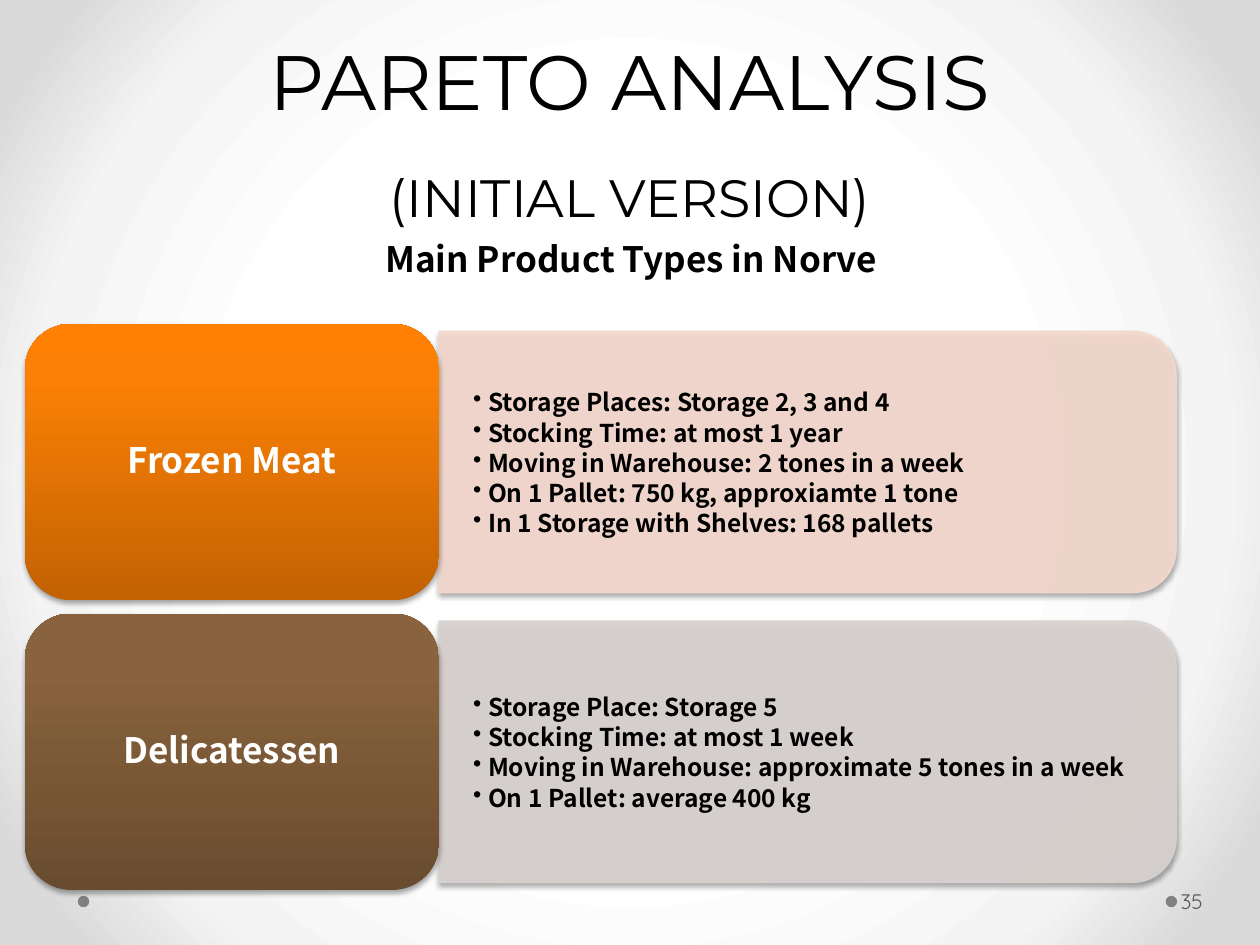
from dataclasses import dataclass

from lxml.etree import SubElement
from pptx import Presentation
from pptx.dml.color import RGBColor
from pptx.enum.shapes import MSO_SHAPE
from pptx.enum.text import MSO_ANCHOR, MSO_AUTO_SIZE, PP_ALIGN
from pptx.oxml.ns import qn
from pptx.util import Cm, Pt


@dataclass(frozen=True)
class Theme:
    title_font: str = "Montserrat"
    body_font: str = "Noto Sans CJK SC"
    number_font: str = "Quicksand"
    title_size: float = 44
    version_size: float = 30
    heading_size: float = 20
    bullet_size: float = 14
    number_size: float = 12
    black: str = "000000"
    white: str = "FFFFFF"
    dot: str = "808080"
    number: str = "595959"
    backdrop: tuple = ((50, "FFFFFF"), (76, "F4F4F4"), (92, "DADADA"))
    orange: tuple = ((0, "C26203"), (80, "FB8004"), (100, "FF8002"))
    brown: tuple = ((0, "694C2F"), (80, "89633D"), (100, "8B633C"))
    pale_orange: str = "F5D9CD"
    pale_brown: str = "D9D3D0"


THEME = Theme()

PRODUCTS = [
    ("Frozen Meat", THEME.orange, THEME.pale_orange, [
        "Storage Places: Storage 2, 3 and 4",
        "Stocking Time: at most 1 year",
        "Moving in Warehouse: 2 tones in a week",
        "On 1 Pallet: 750 kg, approxiamte 1 tone",
        "In 1 Storage with Shelves: 168 pallets",
    ]),
    ("Delicatessen", THEME.brown, THEME.pale_brown, [
        "Storage Place: Storage 5",
        "Stocking Time: at most 1 week",
        "Moving in Warehouse: approximate 5 tones in a week",
        "On 1 Pallet: average 400 kg",
    ]),
]

CARD_LEFT, CARD_TOP, CARD_WIDTH, CARD_HEIGHT = 0.5, 6.53, 8.35, 5.57
CARD_PITCH = 5.84
PANEL_WIDTH, PANEL_HEIGHT = 14.86, 5.27


def add_xml(parent, tag, **attributes):
    return SubElement(parent, qn(tag), {key: str(value) for key, value in attributes.items()})


def write_text(para, text, *, size, font=THEME.body_font, color=THEME.black,
               bold=False, align=None, spacing=None):
    """Append a formatted run to the paragraph."""
    if align is not None:
        para.alignment = align
    if spacing is not None:
        para.line_spacing = spacing
    span = para.add_run()
    span.text = text
    span.font.size = Pt(size)
    span.font.name = font
    span.font.bold = bold
    span.font.color.rgb = RGBColor.from_string(color)


def set_frame(frame, anchor, insets):
    frame.word_wrap = True
    frame.auto_size = MSO_AUTO_SIZE.NONE
    frame.vertical_anchor = anchor
    (frame.margin_left, frame.margin_top,
     frame.margin_right, frame.margin_bottom) = map(Cm, insets)


def add_text_box(slide, left, top, width, height, anchor=MSO_ANCHOR.MIDDLE,
                 insets=(0.25, 0.13, 0.25, 0.13)):
    box = slide.shapes.add_textbox(Cm(left), Cm(top), Cm(width), Cm(height))
    set_frame(box.text_frame, anchor, insets)
    return box.text_frame


def fill_gradient(fill, element, stops, radial=False):
    fill.gradient()
    gradient = element.find(".//" + qn("a:gradFill"))
    gradient.clear()
    stop_list = add_xml(gradient, "a:gsLst")
    for position, color in stops:
        stop = add_xml(stop_list, "a:gs", pos=position * 1000)
        add_xml(stop, "a:srgbClr", val=color)
    if radial:
        shade = add_xml(gradient, "a:path", path="circle")
        add_xml(shade, "a:fillToRect", l=50000, t=50000, r=50000, b=50000)
    else:
        add_xml(gradient, "a:lin", ang=270 * 60000, scaled=0)


def add_shape(slide, kind, left, top, width, height):
    shape = slide.shapes.add_shape(kind, Cm(left), Cm(top), Cm(width), Cm(height))
    shape.line.fill.background()
    shape.shadow.inherit = False
    return shape


def add_soft_shadow(shape):
    effects = shape._element.spPr.find(qn("a:effectLst"))
    shadow = add_xml(effects, "a:outerShdw", blurRad=Pt(3.1), dist=Pt(1.8),
                     dir=90 * 60000, rotWithShape=0)
    add_xml(add_xml(shadow, "a:srgbClr", val=THEME.black), "a:alpha", val=35000)


def add_dot(slide, left):
    dot = add_shape(slide, MSO_SHAPE.OVAL, left, 18.06, 0.23, 0.23)
    dot.fill.solid()
    dot.fill.fore_color.rgb = RGBColor.from_string(THEME.dot)


def add_panel(slide, left, middle, color):
    """Add a panel whose right corners are rounded, by a quarter turn."""
    center = left + PANEL_WIDTH / 2
    panel = add_shape(slide, MSO_SHAPE.ROUND_2_SAME_RECTANGLE,
                      center - PANEL_HEIGHT / 2, middle - PANEL_WIDTH / 2,
                      PANEL_HEIGHT, PANEL_WIDTH)
    panel.rotation = 90
    panel.fill.solid()
    panel.line.fill.solid()
    panel.line.width = Pt(0.75)
    for paint in (panel.fill, panel.line.fill):
        paint.fore_color.rgb = RGBColor.from_string(color)
    for color_node in panel._element.spPr.iter(qn("a:srgbClr")):
        add_xml(color_node, "a:alpha", val=90000)
    add_soft_shadow(panel)


def add_bullets(slide, left, middle, lines):
    height = 4.75
    frame = add_text_box(slide, left, middle - height / 2, 14.6, height,
                         insets=(0.69, 0.36, 0.69, 0.36))
    for index, line in enumerate(lines):
        para = frame.add_paragraph() if index else frame.paragraphs[0]
        write_text(para, line, size=THEME.bullet_size, bold=True, spacing=Pt(17.2))
        properties = para._p.get_or_add_pPr()
        properties.set("marL", str(Cm(0.3)))
        properties.set("indent", str(-Cm(0.3)))
        add_xml(properties, "a:buChar", char="•")


def add_card(slide, top, name, stops):
    card = add_shape(slide, MSO_SHAPE.ROUNDED_RECTANGLE,
                     CARD_LEFT, top, CARD_WIDTH, CARD_HEIGHT)
    fill_gradient(card.fill, card._element, stops)
    add_soft_shadow(card)
    set_frame(card.text_frame, MSO_ANCHOR.MIDDLE, (0.2, 0.1, 0.2, 0.1))
    write_text(card.text_frame.paragraphs[0], name, size=THEME.heading_size,
               color=THEME.white, bold=True, align=PP_ALIGN.CENTER, spacing=0.9)


def format_title(title):
    title.left, title.top, title.width, title.height = map(Cm, (1.27, 0.53, 22.86, 4.19))
    set_frame(title.text_frame, MSO_ANCHOR.BOTTOM, (0.25, 0.13, 0.25, 0.13))
    para = title.text_frame.paragraphs[0]
    write_text(para, "PARETO ANALYSIS", size=THEME.title_size, font=THEME.title_font,
               align=PP_ALIGN.CENTER, spacing=Pt(58))
    para.add_line_break()
    write_text(para, "(INITIAL VERSION)", size=THEME.version_size, font=THEME.title_font)


def main():
    deck = Presentation()
    deck.slide_width, deck.slide_height = Cm(25.4), Cm(19.05)
    slide = deck.slides.add_slide(deck.slide_layouts.get_by_name("Title Only"))
    fill_gradient(slide.background.fill, slide._element, THEME.backdrop, radial=True)

    for left in (1.57, 23.5):
        add_dot(slide, left)
    format_title(slide.shapes.title)
    heading = add_text_box(slide, 1.3, 4.66, 22.86, 1.27, anchor=MSO_ANCHOR.TOP)
    write_text(heading.paragraphs[0], "Main Product Types in Norve",
               size=THEME.heading_size, bold=True, align=PP_ALIGN.CENTER)
    number = add_text_box(slide, 23.72, 17.65, 1.55, 1.02, insets=(0.08, 0.13, 0.13, 0.13))
    write_text(number.paragraphs[0], "35", size=THEME.number_size,
               font=THEME.number_font, color=THEME.number)

    panel_left = CARD_LEFT + CARD_WIDTH
    for index, (name, stops, panel_color, lines) in enumerate(PRODUCTS):
        top = CARD_TOP + index * CARD_PITCH
        middle = top + CARD_HEIGHT / 2
        add_panel(slide, panel_left, middle, panel_color)
        add_bullets(slide, panel_left, middle, lines)
        add_card(slide, top, name, stops)

    deck.save("out.pptx")


if __name__ == "__main__":
    main()
